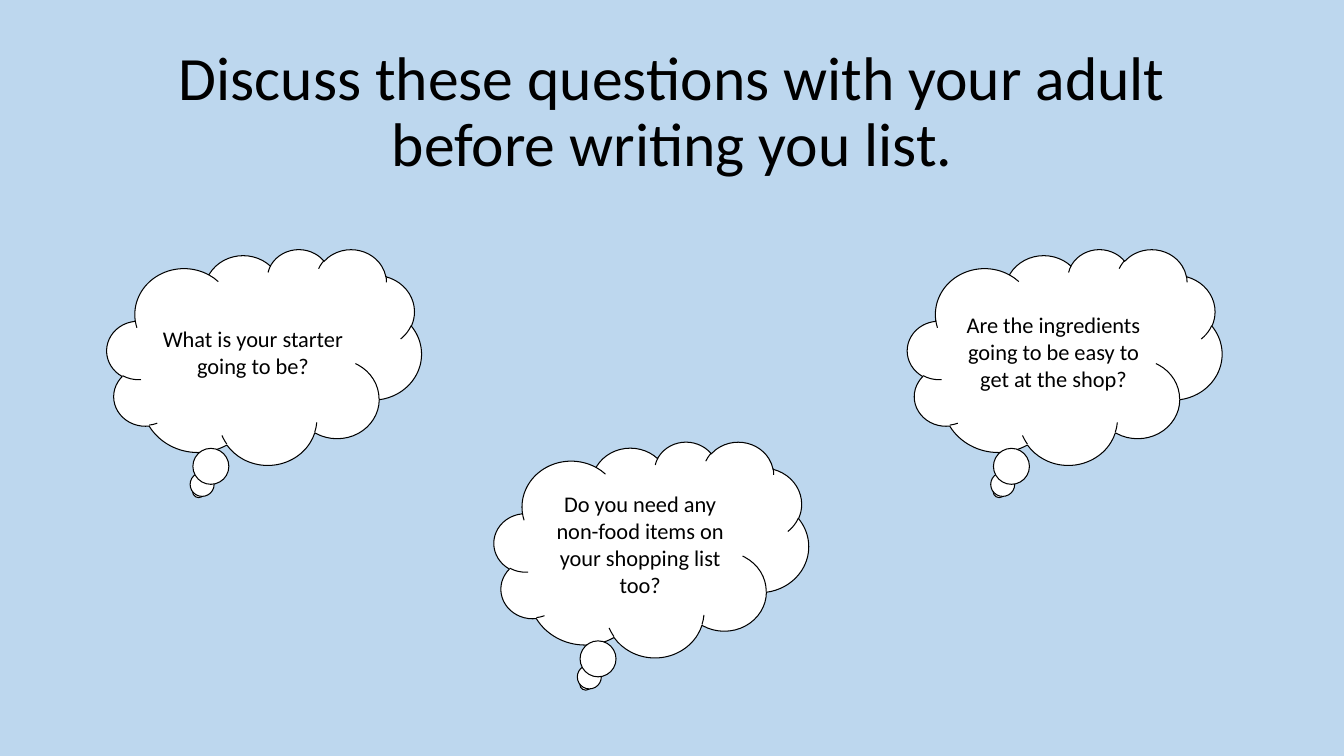
import pptx
import pptx.util
import pptx.dml.color
import pptx.enum.shapes
import pptx.enum.text

Inches, Pt = pptx.util.Inches, pptx.util.Pt

HEADING = "Discuss these questions with your adult before writing you list."
# Question, left, top
QUESTIONS = [
    ("What is your starter going to be?", 1.06, 2.47),
    ("Do you need any non-food items on your shopping list too?", 4.9, 4.38),
    ("Are the ingredients going to be easy to get at the shop?", 9, 2.47),
]
CLOUD_WIDTH, CLOUD_HEIGHT = 3.12, 2.14
SKY, WHITE, BLACK = "BDD7EE", "FFFFFF", "000000"


def paint(color_format, color):
    color_format.rgb = pptx.dml.color.RGBColor.from_string(color)


def write(frame, text, size):
    frame.word_wrap = True
    frame.vertical_anchor = pptx.enum.text.MSO_ANCHOR.MIDDLE
    paragraph = frame.paragraphs[0]
    paragraph.alignment = pptx.enum.text.PP_ALIGN.CENTER
    run = paragraph.add_run()
    run.text = text
    run.font.size = Pt(size)
    run.font.name = "Calibri"
    paint(run.font.color, BLACK)
    return paragraph


deck = pptx.Presentation()
deck.slide_width, deck.slide_height = Inches(13.33), Inches(7.5)
slide = deck.slides.add_slide(deck.slide_layouts[5])

# Background
slide.background.fill.solid()
paint(slide.background.fill.fore_color, SKY)

# Heading
heading = slide.shapes.title
heading.left, heading.top = Inches(0.92), Inches(0.4)
heading.width, heading.height = Inches(11.5), Inches(1.45)
write(heading.text_frame, HEADING, 44).line_spacing = 0.9
heading.text_frame.auto_size = pptx.enum.text.MSO_AUTO_SIZE.NONE

# Thought clouds
for question, left, top in QUESTIONS:
    cloud = slide.shapes.add_shape(
        pptx.enum.shapes.MSO_SHAPE.CLOUD_CALLOUT,
        Inches(left), Inches(top), Inches(CLOUD_WIDTH), Inches(CLOUD_HEIGHT))
    cloud.shadow.inherit = False
    cloud.fill.solid()
    paint(cloud.fill.fore_color, WHITE)
    paint(cloud.line.color, BLACK)
    cloud.line.width = Pt(0.75)
    write(cloud.text_frame, question, 16)

deck.save("out.pptx")
